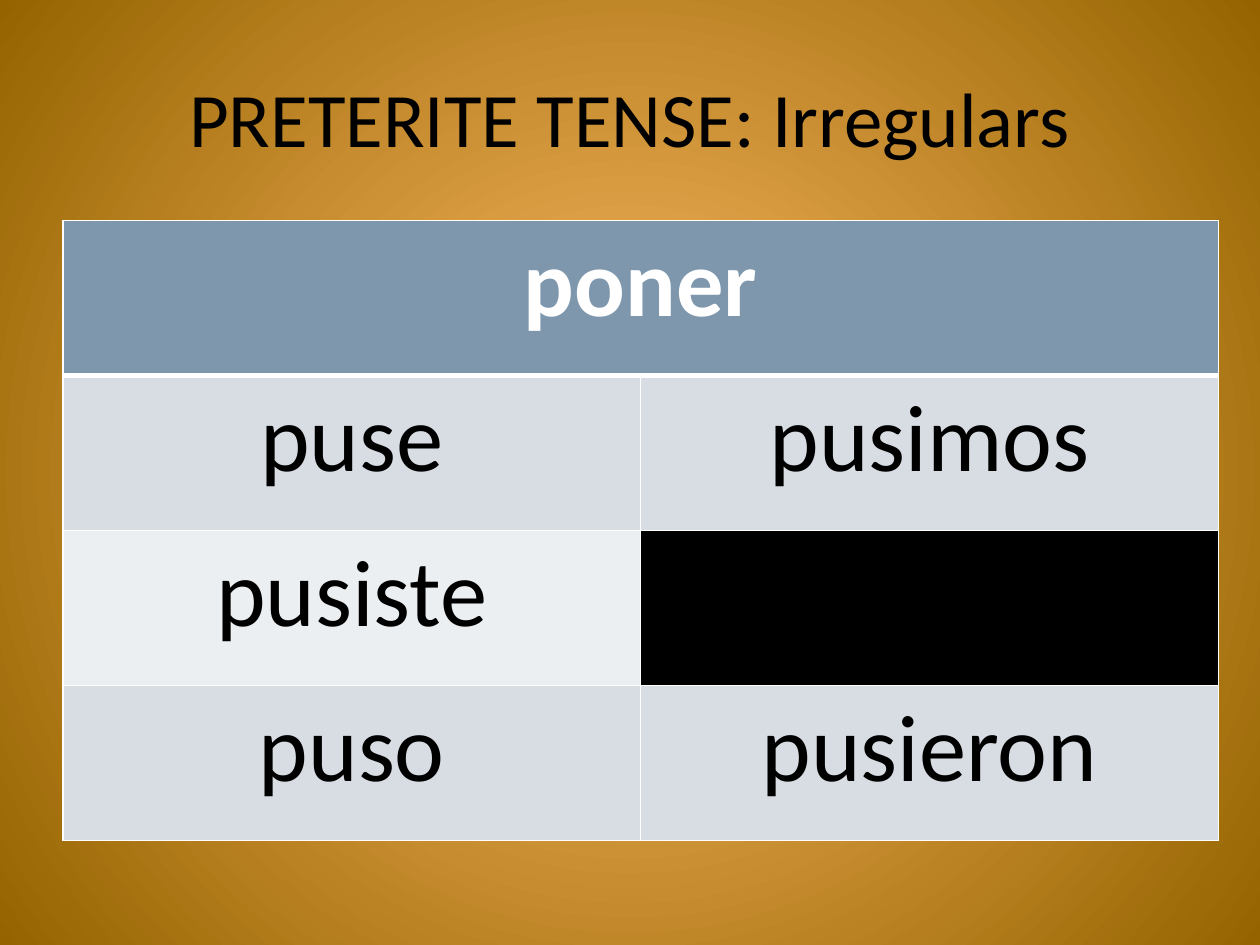
import pptx
import pptx.util
import pptx.dml.color
import pptx.enum.text
import pptx.oxml
import pptx.oxml.ns

TITLE = "PRETERITE TENSE: Irregulars"
VERB = "poner"
FORMS = [("puse", "pusimos"), ("pusiste", None), ("puso", "pusieron")]

THEME = {
    "font": "Calibri",
    "title_size": 44,
    "cell_size": 54,
    "text": "000000",
    "light": "FFFFFF",
    "header": "7E97AD",
    "bands": ("D8DDE3", "ECEFF1"),
    "blocked": "000000",
    "glow": ("FFBA65", "956400"),
}

Inches = pptx.util.Inches
RGB = pptx.dml.color.RGBColor.from_string
NS = pptx.oxml.ns.nsdecls("a")


def write(tf, text, size=THEME["cell_size"], color=THEME["text"], bold=False):
    p = tf.paragraphs[0]
    p.alignment = pptx.enum.text.PP_ALIGN.CENTER
    r = p.add_run()
    r.text = text
    r.font.name = THEME["font"]
    r.font.size = pptx.util.Pt(size)
    r.font.bold = bold
    r.font.color.rgb = RGB(color)


def style_cell(cell, fill, top=1, bottom=1):
    cell.fill.solid()
    cell.fill.fore_color.rgb = RGB(fill)
    tc_pr = cell._tc.get_or_add_tcPr()
    for i, (side, width) in enumerate(zip("LRTB", (1, 1, top, bottom))):
        tc_pr.insert(i, pptx.oxml.parse_xml(
            f'<a:ln{side} {NS} w="{pptx.util.Pt(width)}"><a:solidFill>'
            f'<a:srgbClr val="{THEME["light"]}"/></a:solidFill></a:ln{side}>'))


def paint_background(s):
    fill = s.background.fill
    fill.gradient()
    for stop, color in zip(fill.gradient_stops, THEME["glow"]):
        stop.color.rgb = RGB(color)
    grad = s.background._cSld.find(".//" + pptx.oxml.ns.qn("a:gradFill"))
    lin = grad.find(pptx.oxml.ns.qn("a:lin"))
    grad.replace(lin, pptx.oxml.parse_xml(
        f'<a:path {NS} path="circle"><a:fillToRect l="50000" t="50000" '
        'r="50000" b="50000"/></a:path>'))


def add_title(s):
    tf = s.shapes.add_textbox(
        Inches(0.5), Inches(0.3), Inches(9), Inches(1.25)).text_frame
    tf.word_wrap = True
    tf.vertical_anchor = pptx.enum.text.MSO_ANCHOR.MIDDLE
    write(tf, TITLE, size=THEME["title_size"])


def add_conjugation(s):
    table = s.shapes.add_table(
        len(FORMS) + 1, 2, Inches(0.5), Inches(1.75),
        Inches(9.17), Inches(4.92)).table
    header = table.cell(0, 0)
    header.merge(table.cell(0, 1))
    for cell in table.rows[0].cells:
        style_cell(cell, THEME["header"], bottom=3)
    write(header.text_frame, VERB, color=THEME["light"], bold=True)
    for row, forms in enumerate(FORMS, 1):
        band = THEME["bands"][(row - 1) % 2]
        for col, form in enumerate(forms):
            cell = table.cell(row, col)
            style_cell(cell, band if form else THEME["blocked"],
                       top=3 if row == 1 else 1)
            if form:
                write(cell.text_frame, form)


def main():
    prs = pptx.Presentation()
    prs.slide_width, prs.slide_height = Inches(10), Inches(7.5)
    s = prs.slides.add_slide(prs.slide_layouts[6])
    paint_background(s)
    add_title(s)
    add_conjugation(s)
    prs.save("out.pptx")


if __name__ == "__main__":
    main()
